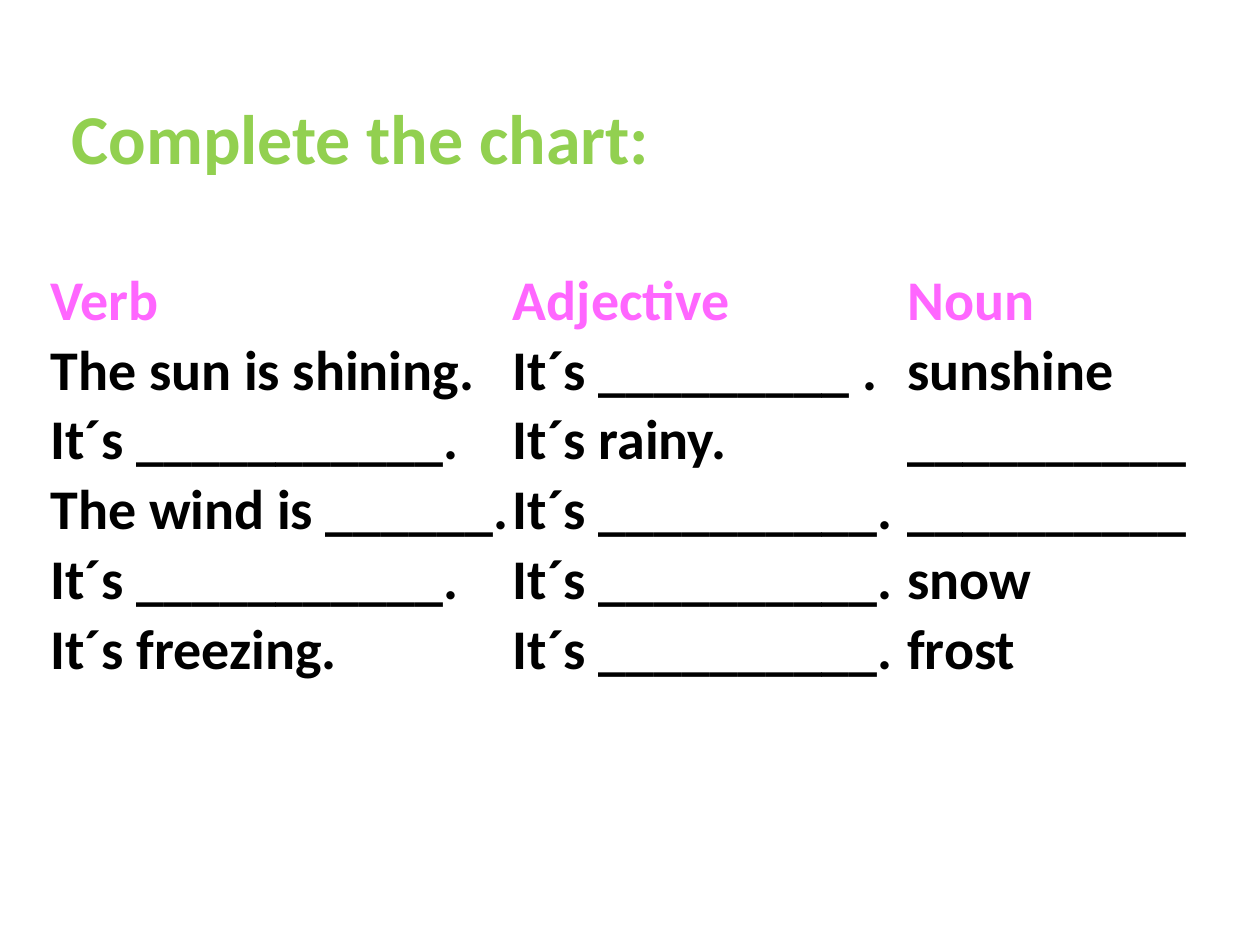
from pptx import Presentation
from pptx.dml.color import RGBColor
from pptx.enum import text
from pptx.util import Inches, Pt

GREEN, PINK, BLACK = "92D050", "FF66FF", "000000"
COLUMN_WIDTHS = [3.67, 3.13, 2.42]
ROW_HEIGHT = 0.43
WEATHER_ROWS = [
    ["Verb", "Adjective", "Noun"],
    ["The sun is shining.", "It´s _________ .", "sunshine"],
    ["It´s ___________.", "It´s rainy.", "__________"],
    ["The wind is ______.", "It´s __________.", "__________"],
    ["It´s ___________.", "It´s __________.", "snow"],
    ["It´s freezing.", "It´s __________.", "frost"],
]


def write(frame, words, size, color):
    frame.text = words
    for run in frame.paragraphs[0].runs:
        run.font.name = "Calibri"
        run.font.size = Pt(size)
        run.font.bold = True
        run.font.color.rgb = RGBColor.from_string(color)


def add_heading(slide, words):
    heading = slide.shapes.add_textbox(
        Inches(0.47), Inches(0.7), Inches(4.83), Inches(0.77))
    frame = heading.text_frame
    frame.word_wrap = False
    frame.auto_size = text.MSO_AUTO_SIZE.SHAPE_TO_FIT_TEXT
    write(frame, words, 40, GREEN)


def fill_cell(cell, words, color):
    cell.fill.background()
    cell.vertical_anchor = text.MSO_ANCHOR.BOTTOM
    cell.margin_left = cell.margin_right = cell.margin_top = Inches(0.01)
    cell.margin_bottom = 0
    write(cell.text_frame, words, 32, color)


def add_weather_table(slide):
    table = slide.shapes.add_table(
        len(WEATHER_ROWS), len(COLUMN_WIDTHS), Inches(0.39), Inches(2.11),
        Inches(sum(COLUMN_WIDTHS)),
        Inches(ROW_HEIGHT * len(WEATHER_ROWS))).table
    table.first_row = table.horz_banding = False
    for column, width in zip(table.columns, COLUMN_WIDTHS):
        column.width = Inches(width)
    for r, entries in enumerate(WEATHER_ROWS):
        table.rows[r].height = Inches(ROW_HEIGHT)
        for c, words in enumerate(entries):
            fill_cell(table.cell(r, c), words, BLACK if r else PINK)


def main():
    deck = Presentation()
    deck.slide_width, deck.slide_height = Inches(10), Inches(7.5)
    slide = deck.slides.add_slide(deck.slide_layouts[6])
    add_weather_table(slide)
    add_heading(slide, "Complete the chart:")
    deck.save("out.pptx")


if __name__ == "__main__":
    main()
